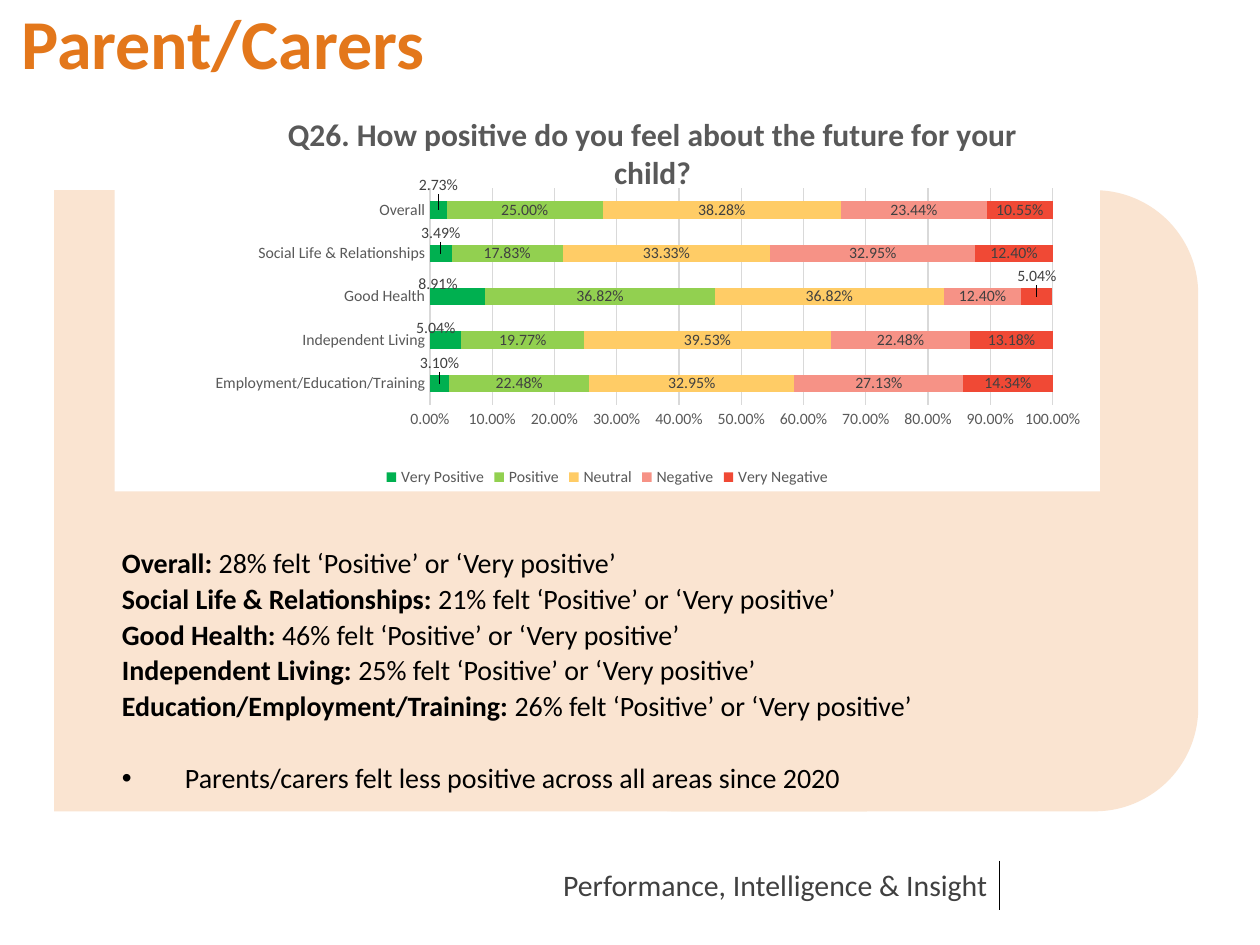
from lxml import etree
from pptx import Presentation
from pptx import util as u
from pptx.chart import data as chart_data
from pptx.dml import color
from pptx.enum import chart as ch, shapes, text
from pptx.oxml import parse_xml
from pptx.oxml.ns import nsdecls, qn

COLORS = {
    "panel": "FAE4D1", "heading": "E3771B", "black": "000000", "white": "FFFFFF",
    "footer": "404040", "label": "404040", "axis": "595959", "grid": "D9D9D9",
}
FONT = "Calibri"


def style(font, size, name, bold=False):
    font.name, font.size, font.bold = FONT, u.Pt(size), bold
    font.color.rgb = color.RGBColor.from_string(COLORS[name])


def manual_layout(x, y, w=None, h=None):
    parts = "" if w is None else '<c:layoutTarget val="inner"/>'
    if w is not None or x > 0.1:
        parts += '<c:xMode val="edge"/><c:yMode val="edge"/>'
    for tag, value in (("x", x), ("y", y), ("w", w), ("h", h)):
        if value is not None:
            parts += f'<c:{tag} val="{value}"/>'
    return parse_xml(f'<c:layout {nsdecls("c")}><c:manualLayout>{parts}</c:manualLayout></c:layout>')


prs = Presentation()
prs.slide_width, prs.slide_height = u.Inches(10), u.Inches(7.5)
slide = prs.slides.add_slide(prs.slide_layouts[6])

# Panel: square on the left, rounded on the right
for kind, left, width in ((shapes.MSO_SHAPE.RECTANGLE, 0.43, 6.45),
                          (shapes.MSO_SHAPE.ROUNDED_RECTANGLE, 4.54, 4.97)):
    panel = slide.shapes.add_shape(kind, u.Inches(left), u.Inches(1.51),
                                   u.Inches(width), u.Inches(4.93))
    panel.shadow.inherit = False
    panel.fill.solid()
    panel.fill.fore_color.rgb = color.RGBColor.from_string(COLORS["panel"])
    panel.line.fill.background()

# Footer with its rule
footer = slide.shapes.add_textbox(u.Inches(4.37), u.Inches(6.83), u.Inches(4.11), u.Inches(0.39))
footer.text_frame.word_wrap = True
footer.text_frame.text = "Performance, Intelligence & Insight"
style(footer.text_frame.paragraphs[0].runs[0].font, 17, "footer")

rule = slide.shapes.add_connector(shapes.MSO_CONNECTOR.STRAIGHT, u.Inches(7.93), u.Inches(6.83),
                                  u.Inches(7.93), u.Inches(7.22))
rule.line.color.rgb = color.RGBColor.from_string(COLORS["black"])
rule.line.width = u.Pt(0.75)
etree.SubElement(rule._element.spPr, qn("a:effectLst"))

# Heading
heading = slide.shapes.add_textbox(u.Inches(0.07), u.Inches(-0.05), u.Inches(9.06), u.Inches(0.74))
heading.text_frame.word_wrap = True
heading.text_frame.text = "Parent/Carers"
style(heading.text_frame.paragraphs[0].runs[0].font, 40, "heading", True)

# Summary by area, then the closing bullet
SUMMARY = [
    ("Overall", 28), ("Social Life & Relationships", 21), ("Good Health", 46),
    ("Independent Living", 25), ("Education/Employment/Training", 26),
]
summary = slide.shapes.add_textbox(u.Inches(0.87), u.Inches(4.31), u.Inches(7.2), u.Inches(1.72))
frame = summary.text_frame
frame.word_wrap = True
for i, (area, share) in enumerate(SUMMARY):
    line = frame.paragraphs[0] if i == 0 else frame.add_paragraph()
    for words, bold in ((f"{area}: ", True), (f"{share}% felt ‘Positive’ or ‘Very positive’", False)):
        run = line.add_run()
        run.text = words
        style(run.font, 16, "black", bold)
    line.line_spacing, line.space_before = 0.9, u.Pt(3.2)

finding = frame.add_paragraph()
finding.text = "Parents/carers felt less positive across all areas since 2020"
finding.line_spacing, finding.space_before = 0.9, u.Pt(24)
style(finding.runs[0].font, 16, "black")
props = finding._p.get_or_add_pPr()
props.set("marL", str(u.Inches(0.5)))
props.set("indent", str(u.Inches(-0.5)))
etree.SubElement(props, qn("a:buFont")).set("typeface", "Arial")
etree.SubElement(props, qn("a:buChar")).set("char", "•")

# Chart data
AREAS = ["Employment/Education/Training", "Independent Living", "Good Health",
         "Social Life & Relationships", "Overall"]
ANSWERS = [
    ("Very Positive", "00B050", (0.031, 0.0504, 0.0891, 0.0349, 0.0273)),
    ("Positive", "92D050", (0.2248, 0.1977, 0.3682, 0.1783, 0.25)),
    ("Neutral", "FFCC66", (0.3295, 0.3953, 0.3682, 0.3333, 0.3828)),
    ("Negative", "F69286", (0.2713, 0.2248, 0.124, 0.3295, 0.2344)),
    ("Very Negative", "F04935", (0.1434, 0.1318, 0.0504, 0.124, 0.1055)),
]
# Labels lifted off narrow bars: area index -> shift as a share of the chart
LIFTED = {
    "Very Positive": {0: (0, -0.05), 1: (-0.01, -0.03), 2: (-0.02, -0.03),
                      3: (0, -0.05), 4: (0, -0.06)},
    "Very Negative": {2: (0, -0.05)},
}
answers = chart_data.CategoryChartData(number_format="0.00%")
answers.categories = AREAS
for name, _, values in ANSWERS:
    answers.add_series(name, values)
chart = slide.shapes.add_chart(ch.XL_CHART_TYPE.BAR_STACKED, u.Inches(0.91), u.Inches(0.69),
                               u.Inches(7.82), u.Inches(3.21), answers).chart
style(chart.font, 10, "black")
chart._chartSpace.chart.addnext(parse_xml(
    f'<c:spPr {nsdecls("c", "a")}><a:solidFill><a:srgbClr val="{COLORS["white"]}"/></a:solidFill>'
    '<a:ln><a:noFill/></a:ln></c:spPr>'))

# Chart title, legend and plot area
chart.has_title = True
title = chart.chart_title
title.text_frame.text = "Q26. How positive do you feel about the future for your child?"
style(title.text_frame.paragraphs[0].runs[0].font, 18, "axis", True)
title.include_in_layout = False
for old in title._element.findall(qn("c:layout")):
    title._element.remove(old)
title._element.find(qn("c:tx")).addnext(manual_layout(0.17, 0.05))

chart.has_legend = True
chart.legend.position = ch.XL_LEGEND_POSITION.BOTTOM
chart.legend.include_in_layout = False
style(chart.legend.font, 9, "axis")

plot_area = chart._chartSpace.chart.plotArea
for old in plot_area.findall(qn("c:layout")):
    plot_area.remove(old)
plot_area.insert(0, manual_layout(0.32, 0.251, 0.632, 0.536))

# Axes
for axis in (chart.category_axis, chart.value_axis):
    axis.major_tick_mark = axis.minor_tick_mark = ch.XL_TICK_MARK.NONE
    style(axis.tick_labels.font, 9, "axis")
shares = chart.value_axis
shares.minimum_scale, shares.maximum_scale, shares.major_unit = 0, 1, 0.1
shares.tick_labels.number_format = "0.00%"
shares.tick_labels.number_format_is_linked = False
shares.format.line.fill.background()
for line in (chart.category_axis.format.line, shares.major_gridlines.format.line):
    line.color.rgb = color.RGBColor.from_string(COLORS["grid"])
    line.width = u.Pt(0.75)

# Bars and their labels
bars = chart.plots[0]
bars.gap_width, bars.overlap, bars.vary_by_categories = 150, 100, False
for series, (name, fill, _) in zip(bars.series, ANSWERS):
    series.format.fill.solid()
    series.format.fill.fore_color.rgb = color.RGBColor.from_string(fill)
    labels = series.data_labels
    labels.show_value = True
    labels.number_format, labels.number_format_is_linked = "0.00%", False
    labels.position = ch.XL_LABEL_POSITION.CENTER
    style(labels.font, 9, "label")
    for index, shift in LIFTED.get(name, {}).items():
        label = series.points[index].data_label
        label.position = ch.XL_LABEL_POSITION.CENTER
        style(label.font, 9, "label")
        mark = series._element.xpath(f"c:dLbls/c:dLbl/c:idx[@val='{index}']")[0]
        mark.addnext(manual_layout(*shift))

prs.save("out.pptx")
